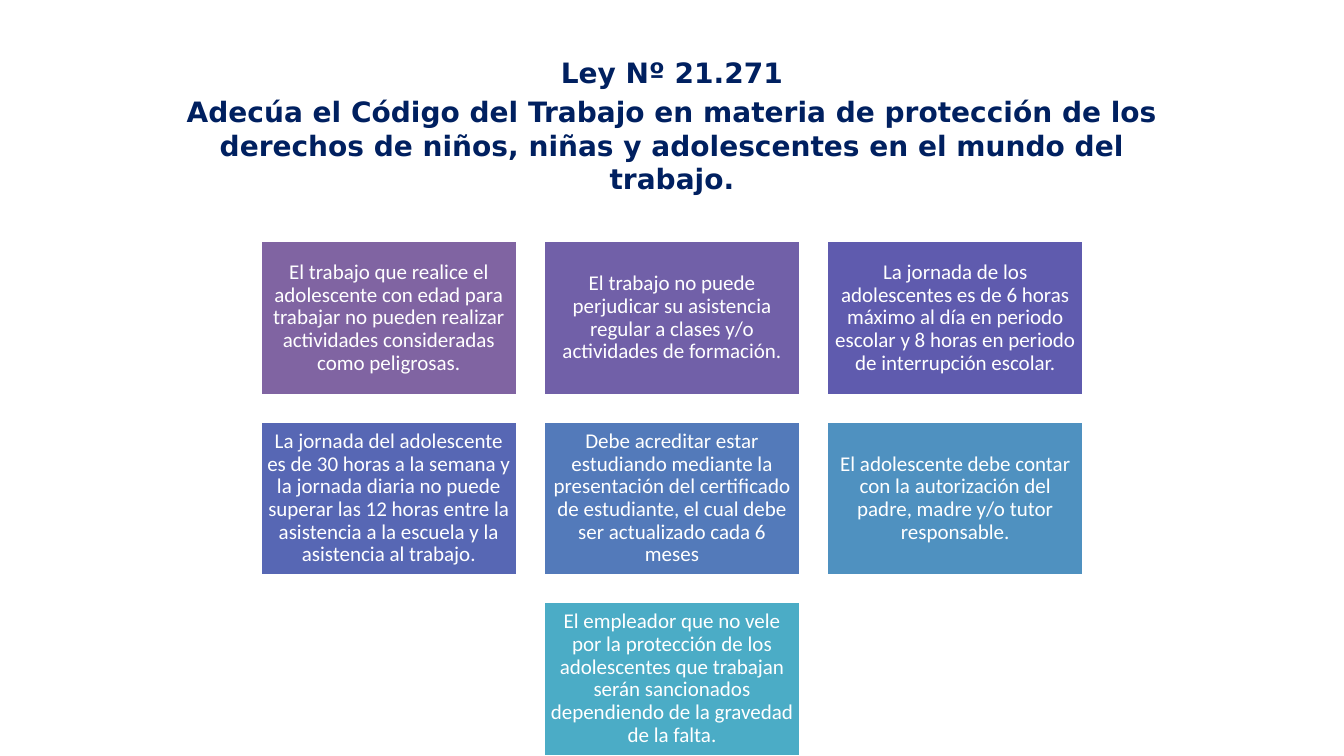
from pptx import Presentation
from pptx.dml.color import RGBColor
from pptx.enum.shapes import MSO_SHAPE as Shape
from pptx.enum.text import MSO_ANCHOR as Anchor, MSO_AUTO_SIZE as AutoSize, PP_ALIGN as Align
from pptx.util import Pt


def color(hex_code):
    return RGBColor.from_string(hex_code)


def add_span(para, text, font_name, size, hex_code, bold=False):
    span = para.add_run()
    span.text = text
    span.font.name = font_name
    span.font.size = Pt(size)
    span.font.bold = bold
    span.font.color.rgb = color(hex_code)


deck = Presentation()
deck.slide_width, deck.slide_height = Pt(960), Pt(540)
page = deck.slides.add_slide(deck.slide_layouts[5])

title = page.shapes.title
title.left, title.top, title.width, title.height = Pt(120), Pt(36), Pt(720), Pt(108)
title_frame = title.text_frame
title_frame.word_wrap = True
title_frame.auto_size = AutoSize.NONE
title_frame.vertical_anchor = Anchor.TOP
title_lines = [
    "Ley Nº 21.271",
    "Adecúa el Código del Trabajo en materia de protección de los derechos "
    "de niños, niñas y adolescentes en el mundo del trabajo.",
]
for number, line in enumerate(title_lines):
    para = title_frame.add_paragraph() if number else title_frame.paragraphs[0]
    para.alignment = Align.CENTER
    para.space_before = Pt(4 * number)
    add_span(para, line, "DejaVu Sans", 20, "002060", bold=True)

rule_rows = [
    [
        ("8064A2", "El trabajo que realice el adolescente con edad para trabajar "
                   "no pueden realizar actividades consideradas como peligrosas."),
        ("7160A8", "El trabajo no puede perjudicar su asistencia regular a clases "
                   "y/o actividades de formación."),
        ("5F5BAE", "La jornada de los adolescentes es de 6 horas máximo al día en "
                   "periodo escolar y 8 horas en periodo de interrupción escolar."),
    ],
    [
        ("5767B4", "La jornada del adolescente es de 30 horas a la semana y la "
                   "jornada diaria no puede superar las 12 horas entre la "
                   "asistencia a la escuela y la asistencia al trabajo."),
        ("537ABA", "Debe acreditar estar estudiando mediante la presentación del "
                   "certificado de estudiante, el cual debe ser actualizado cada 6 meses"),
        ("4F91C0", "El adolescente debe contar con la autorización del padre, "
                   "madre y/o tutor responsable."),
    ],
    [
        ("4BACC6", "El empleador que no vele por la protección de los adolescentes "
                   "que trabajan serán sancionados dependiendo de la gravedad de la falta."),
    ],
]
BOX_WIDTH, BOX_HEIGHT, GAP = 183.6, 110.2, 18.7
GRID_CENTER, GRID_TOP = 480, 172

for row, rules in enumerate(rule_rows):
    row_width = len(rules) * (BOX_WIDTH + GAP) - GAP
    row_left = GRID_CENTER - row_width / 2
    top = GRID_TOP + row * (BOX_HEIGHT + GAP)
    for column, (fill, text) in enumerate(rules):
        left = row_left + column * (BOX_WIDTH + GAP)
        box = page.shapes.add_shape(
            Shape.RECTANGLE, Pt(left), Pt(top), Pt(BOX_WIDTH), Pt(BOX_HEIGHT))
        box.shadow.inherit = False
        box.fill.solid()
        box.fill.fore_color.rgb = color(fill)
        box.line.color.rgb = color("FFFFFF")
        box.line.width = Pt(2)
        frame = box.text_frame
        frame.word_wrap = True
        frame.vertical_anchor = Anchor.MIDDLE
        frame.margin_left = frame.margin_right = Pt(4.3)
        frame.margin_top = frame.margin_bottom = Pt(4.3)
        para = frame.paragraphs[0]
        para.alignment = Align.CENTER
        para.line_spacing = 0.9
        add_span(para, text, "Calibri", 15, "FFFFFF")

deck.save("out.pptx")
